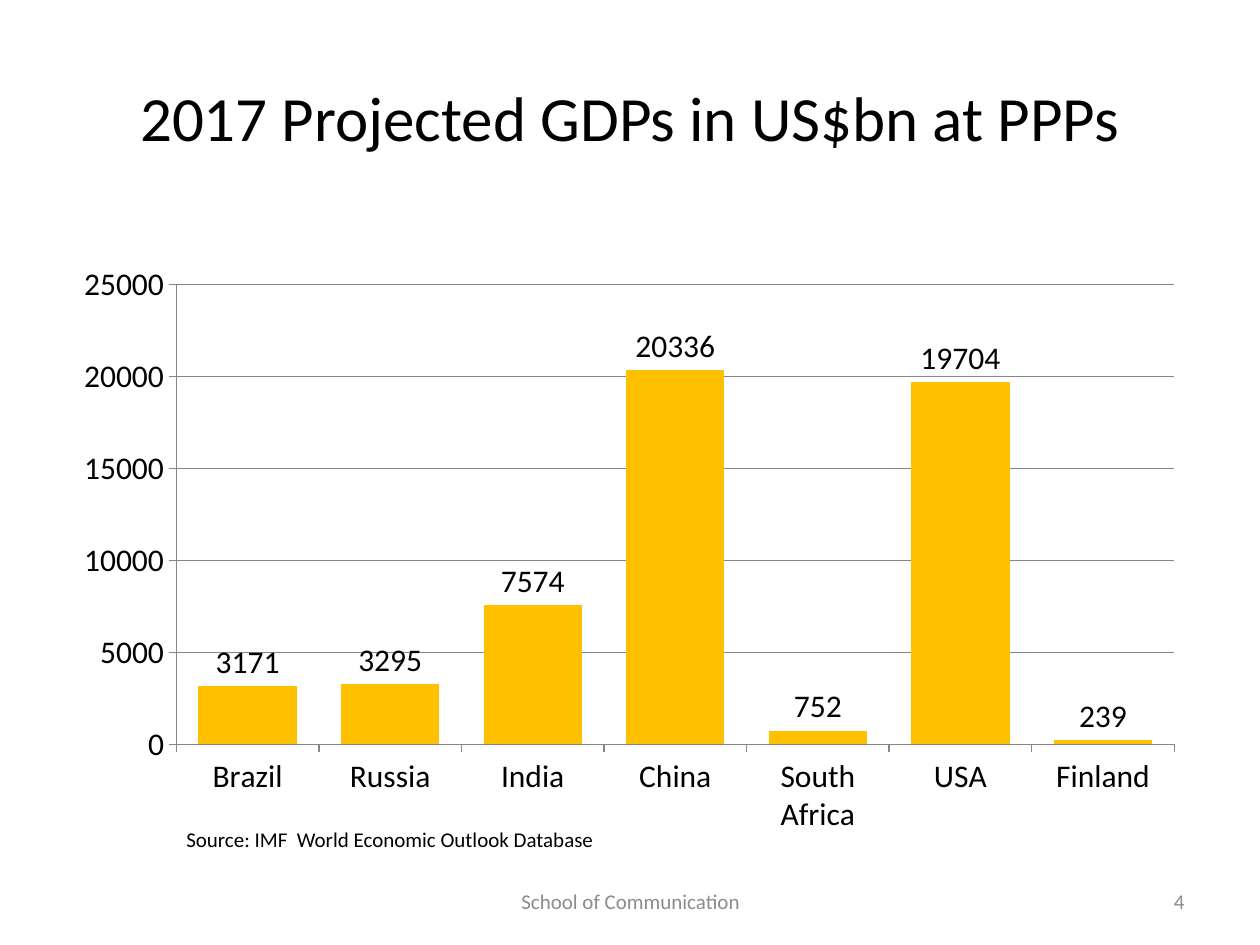
from dataclasses import dataclass

import pptx
import pptx.chart.data
import pptx.dml.color
import pptx.enum.chart
import pptx.enum.text
import pptx.oxml
import pptx.util

WIDTH, HEIGHT = 10, 7.5
FONT = "Calibri"
COLORS = {"text": "000000", "footer": "8C8C8C", "bar": "FFC000", "line": "868686"}
ALIGN = pptx.enum.text.PP_ALIGN
ANCHOR = pptx.enum.text.MSO_ANCHOR
GDP = {
    "Brazil": 3171,
    "Russia": 3295,
    "India": 7574,
    "China": 20336,
    "South Africa": 752,
    "USA": 19704,
    "Finland": 239,
}


@dataclass
class Box:
    """Position and size as shares of the slide."""
    left: float
    top: float
    width: float
    height: float

    def lengths(self) -> list[int]:
        return [pptx.util.Inches(share * side) for share, side in (
            (self.left, WIDTH), (self.top, HEIGHT),
            (self.width, WIDTH), (self.height, HEIGHT))]


@dataclass
class Note:
    text: str
    box: Box
    align: ALIGN
    anchor: ANCHOR
    color: str


TITLE_BOX = Box(0.05, 0.04, 0.9, 0.167)
CHART_BOX = Box(0.05, 0.27, 0.9, 0.624)
PLOT_AREA = {"x": 0.1, "y": 0.05, "w": 0.88, "h": 0.78}
NOTES = [
    Note("School of Communication", Box(0.342, 0.927, 0.317, 0.053),
         ALIGN.CENTER, ANCHOR.MIDDLE, "footer"),
    Note("4", Box(0.717, 0.927, 0.233, 0.053), ALIGN.RIGHT, ANCHOR.MIDDLE, "footer"),
    Note("Source: IMF  World Economic Outlook Database",
         Box(0.138, 0.868, 0.628, 0.04), ALIGN.LEFT, ANCHOR.TOP, "text"),
]


def rgb(name: str) -> pptx.dml.color.RGBColor:
    return pptx.dml.color.RGBColor.from_string(COLORS[name])


def set_font(font, size: float, color: str) -> None:
    font.name = FONT
    font.size = pptx.util.Pt(size)
    font.color.rgb = rgb(color)


def place(sp, box: Box) -> None:
    sp.left, sp.top, sp.width, sp.height = box.lengths()


def write(sp, text: str, align, anchor, size: float, color: str) -> None:
    tf = sp.text_frame
    tf.word_wrap = True
    tf.vertical_anchor = anchor
    p = tf.paragraphs[0]
    p.text = text
    p.alignment = align
    set_font(p.font, size, color)


def set_line(line) -> None:
    line.color.rgb = rgb("line")
    line.width = pptx.util.Pt(0.75)


def fix_plot_area(chart) -> None:
    """Pin the inner plot area to fixed shares of the chart."""
    parts = "".join(f'<c:{key} val="{share}"/>' for key, share in PLOT_AREA.items())
    layout = pptx.oxml.parse_xml(
        '<c:layout xmlns:c="http://schemas.openxmlformats.org/drawingml/2006/chart">'
        '<c:manualLayout><c:layoutTarget val="inner"/>'
        f'<c:xMode val="edge"/><c:yMode val="edge"/>{parts}</c:manualLayout></c:layout>')
    plot_area = chart._chartSpace.chart.plotArea
    for old in plot_area.xpath("c:layout"):
        plot_area.remove(old)
    plot_area.insert(0, layout)


def add_gdp_chart(s) -> None:
    data = pptx.chart.data.CategoryChartData(number_format="General")
    data.categories = list(GDP)
    data.add_series("Series 1", list(GDP.values()))
    chart = s.shapes.add_chart(
        pptx.enum.chart.XL_CHART_TYPE.COLUMN_CLUSTERED, *CHART_BOX.lengths(), data).chart
    chart.has_legend = False
    chart.has_title = False
    set_font(chart.font, 18, "text")
    fix_plot_area(chart)

    # Axes
    for axis in (chart.category_axis, chart.value_axis):
        axis.major_tick_mark = pptx.enum.chart.XL_TICK_MARK.OUTSIDE
        axis.minor_tick_mark = pptx.enum.chart.XL_TICK_MARK.NONE
        set_line(axis.format.line)
    value_axis = chart.value_axis
    value_axis.minimum_scale, value_axis.maximum_scale = 0, 25000
    value_axis.major_unit = 5000
    value_axis.has_major_gridlines = True
    set_line(value_axis.major_gridlines.format.line)

    # Columns and their labels
    plot = chart.plots[0]
    plot.gap_width, plot.overlap = 45, -57
    plot.vary_by_categories = False
    series = plot.series[0]
    series.format.fill.solid()
    series.format.fill.fore_color.rgb = rgb("bar")
    labels = series.data_labels
    labels.show_value = True
    labels.position = pptx.enum.chart.XL_LABEL_POSITION.OUTSIDE_END
    set_font(labels.font, 18, "text")


def main() -> None:
    prs = pptx.Presentation()
    prs.slide_width = pptx.util.Inches(WIDTH)
    prs.slide_height = pptx.util.Inches(HEIGHT)
    s = prs.slides.add_slide(prs.slide_layouts.get_by_name("Title Only"))

    # Title
    title = s.shapes.title
    place(title, TITLE_BOX)
    write(title, "2017 Projected GDPs in US$bn at PPPs",
          ALIGN.CENTER, ANCHOR.MIDDLE, 36, "text")

    add_gdp_chart(s)

    # Footer, slide number and source
    for note in NOTES:
        sp = s.shapes.add_textbox(*note.box.lengths())
        write(sp, note.text, note.align, note.anchor, 12, note.color)

    prs.save("out.pptx")


if __name__ == "__main__":
    main()
